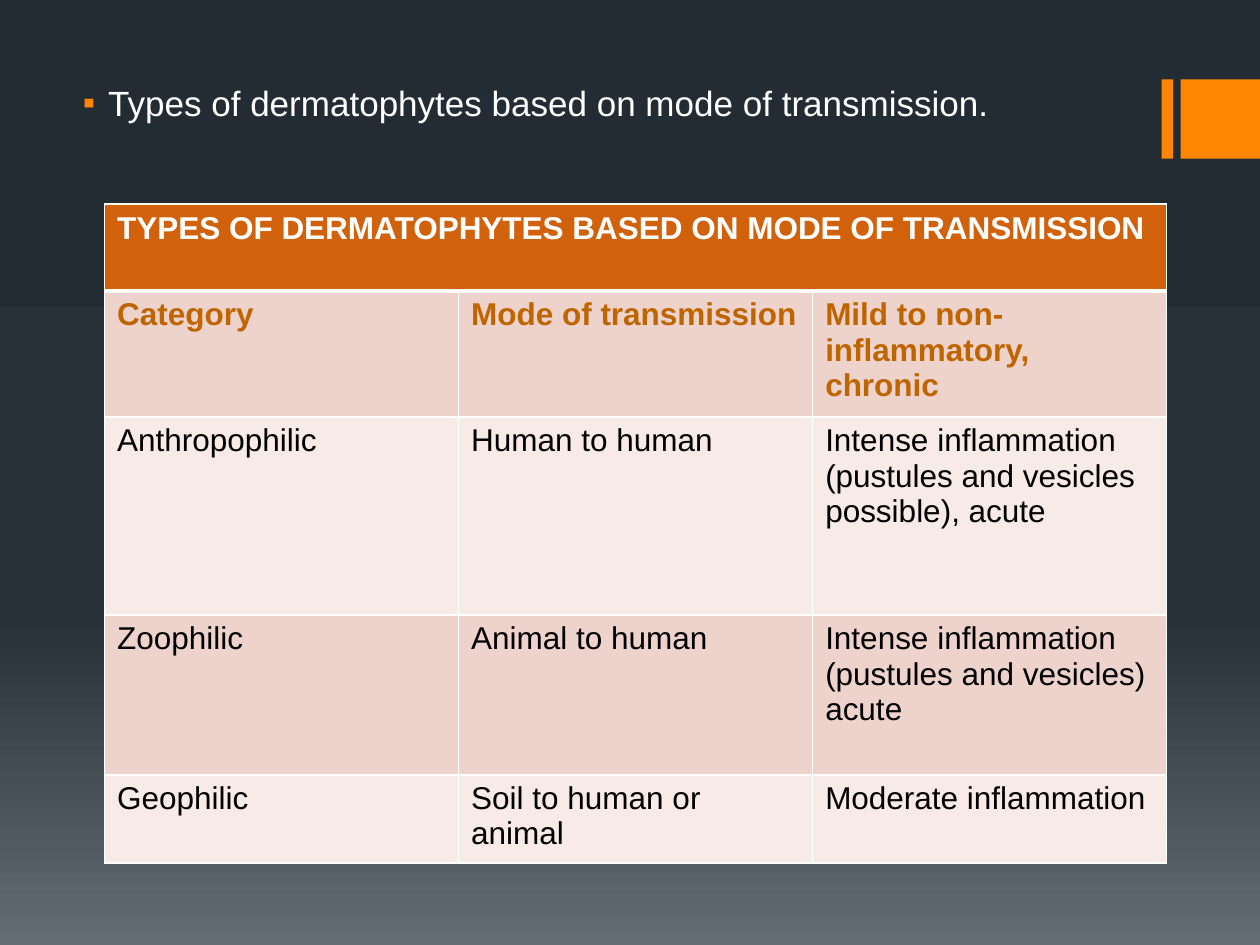
from copy import deepcopy
from pptx import Presentation, util as u
from pptx.dml.color import RGBColor
from pptx.enum import shapes
from pptx.oxml import parse_xml
from pptx.oxml.ns import nsdecls

HUES = {
    "top": "242C33", "mid": "273037", "low": "636D76",
    "accent": "FF8600", "head": "D2610C", "label": "BF6500",
    "dark": "EED2CC", "light": "F7EAE7", "white": "FFFFFF", "black": "000000",
}


def style(font, hue, **form):
    for key, val in {"name": "Arial", **form}.items():
        setattr(font, key, val)
    font.color.rgb = RGBColor.from_string(HUES[hue])


def edge(cell, side, width):
    cell._tc.get_or_add_tcPr().append(parse_xml(
        f'<a:ln{side} {nsdecls("a")} w="{u.Pt(width)}"><a:solidFill>'
        f'<a:srgbClr val="{HUES["white"]}"/></a:solidFill></a:ln{side}>'))


deck = Presentation()
deck.slide_width, deck.slide_height = u.Inches(10), u.Inches(7.5)
slide = deck.slides.add_slide(deck.slide_layouts[6])

fill = slide.background.fill
fill.gradient()
fill.gradient_angle = 270
stops = slide._element.xpath(".//a:gsLst")[0]
stops.append(deepcopy(stops[0]))
for stop, hue, place in zip(fill.gradient_stops, ("top", "mid", "low"), (0, 0.65, 1)):
    stop.color.rgb = RGBColor.from_string(HUES[hue])
    stop.position = place

for left, width in ((9.22, 0.09), (9.37, 0.63)):
    bar = slide.shapes.add_shape(
        shapes.MSO_SHAPE.RECTANGLE,
        u.Inches(left), u.Inches(0.63), u.Inches(width), u.Inches(0.63))
    bar.shadow.inherit = False
    bar.fill.solid()
    bar.fill.fore_color.rgb = RGBColor.from_string(HUES["accent"])
    bar.line.fill.background()

box = slide.shapes.add_textbox(
    u.Inches(0.51), u.Inches(0.6), u.Inches(8.49), u.Inches(6.3))
box.text_frame.word_wrap = True
para = box.text_frame.paragraphs[0]
para.text = "Types of dermatophytes based on mode of transmission."
props = para._p.get_or_add_pPr()
props.set("marL", str(u.Inches(0.25)))
props.set("indent", str(u.Inches(-0.2)))
for tag in (f'<a:buClr {nsdecls("a")}><a:srgbClr val="{HUES["accent"]}"/></a:buClr>',
            f'<a:buFont {nsdecls("a")} typeface="Arial"/>',
            f'<a:buChar {nsdecls("a")} char="▪"/>'):
    props.append(parse_xml(tag))
style(para.runs[0].font, "white", size=u.Pt(20))

ROWS = [
    ("TYPES OF DERMATOPHYTES BASED ON MODE OF TRANSMISSION", "", ""),
    ("Category", "Mode of transmission", "Mild to non-inflammatory,\nchronic"),
    ("Anthropophilic", "Human to human",
     "Intense inflammation\n(pustules and vesicles\npossible), acute"),
    ("Zoophilic", "Animal to human",
     "Intense inflammation\n(pustules and vesicles) acute"),
    ("Geophilic", "Soil to human or animal", "Moderate inflammation"),
]
HIGH = (0.69, 0.98, 1.57, 1.27, 0.69)
FILLS = ("head", "dark", "light", "dark", "light")
INKS = ("white", "label", "black", "black", "black")

grid = slide.shapes.add_table(
    len(ROWS), 3, u.Inches(0.83), u.Inches(1.62),
    u.Inches(8.43), u.Inches(sum(HIGH))).table
for col in grid.columns:
    col.width = u.Inches(2.81)
for r, row in enumerate(ROWS):
    grid.rows[r].height = u.Inches(HIGH[r])
    for c, words in enumerate(row):
        cell = grid.cell(r, c)
        for side in "LRTB":
            edge(cell, side, 3 if (r, side) in ((0, "B"), (1, "T")) else 1)
        cell.fill.solid()
        cell.fill.fore_color.rgb = RGBColor.from_string(HUES[FILLS[r]])
        cell.text = words
        for para in cell.text_frame.paragraphs:
            for run in para.runs:
                style(run.font, INKS[r], size=u.Pt(18), bold=r < 2)
grid.cell(0, 0).merge(grid.cell(0, 2))

deck.save("out.pptx")
